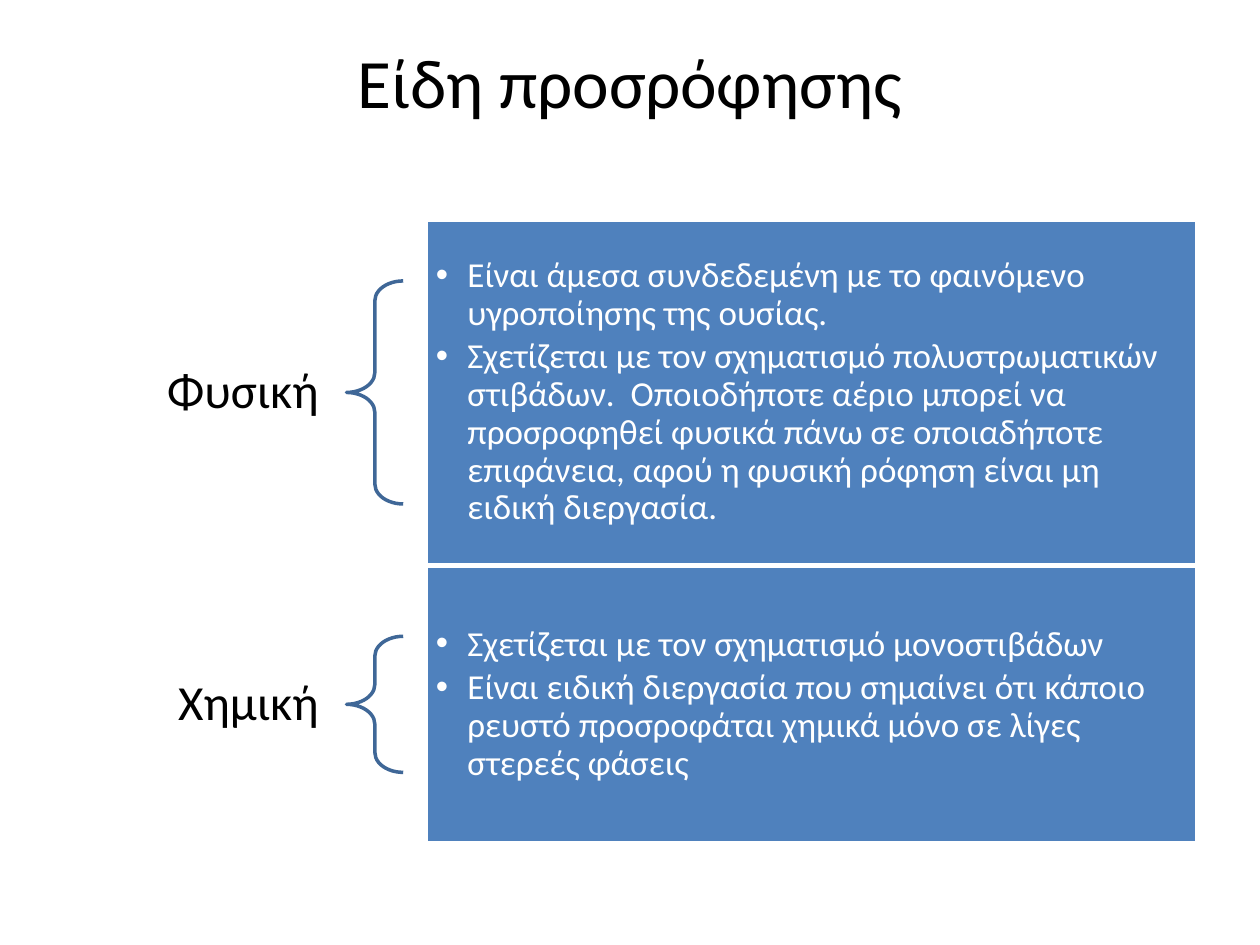
from pptx import Presentation
from pptx import util as u
from pptx.dml.color import RGBColor
from pptx.enum import shapes, text
from pptx.oxml.xmlchemy import OxmlElement

BLACK = RGBColor(0x00, 0x00, 0x00)
WHITE = RGBColor(0xFF, 0xFF, 0xFF)
PANEL_BLUE = RGBColor(0x4F, 0x81, 0xBD)
BRACE_BLUE = RGBColor(0x3F, 0x67, 0x97)

LABEL_LEFT, LABEL_WIDTH, LABEL_HEIGHT = 0.5, 2.25, 0.44
BRACE_LEFT, BRACE_WIDTH = 2.75, 0.45
PANEL_LEFT, PANEL_WIDTH = 3.38, 6.12

KINDS = [
    ("Φυσική", 1.75, 2.73, 1.77, [
        "Είναι άμεσα συνδεδεμένη με το φαινόμενο υγροποίησης της ουσίας.",
        "Σχετίζεται με τον σχηματισμό πολυστρωματικών στιβάδων.  Οποιοδήποτε "
        "αέριο μπορεί να προσροφηθεί φυσικά πάνω σε οποιαδήποτε επιφάνεια, "
        "αφού η φυσική ρόφηση είναι μη ειδική διεργασία.",
    ]),
    ("Χημική", 4.49, 2.2, 1.08, [
        "Σχετίζεται με τον σχηματισμό μονοστιβάδων",
        "Είναι ειδική διεργασία που σημαίνει ότι κάποιο ρευστό προσροφάται "
        "χημικά μόνο σε λίγες στερεές φάσεις",
    ]),
]


def place(box, left, top, width, height):
    box.left, box.top = u.Inches(left), u.Inches(top)
    box.width, box.height = u.Inches(width), u.Inches(height)


def write(box, lines, size, color, align, side=0.08, spacing=1.0, after=0,
          bulleted=False):
    frame = box.text_frame
    frame.text = "\n".join(lines)
    frame.word_wrap = True
    frame.auto_size = text.MSO_AUTO_SIZE.NONE
    frame.vertical_anchor = text.MSO_ANCHOR.MIDDLE
    frame.margin_left = frame.margin_right = u.Inches(side)
    frame.margin_top = frame.margin_bottom = u.Inches(0.08)
    for para in frame.paragraphs:
        para.alignment = align
        para.line_spacing = spacing
        para.space_before = u.Pt(0)
        para.space_after = u.Pt(after)
        para.font.size = u.Pt(size)
        for span in para.runs:
            span.font.size = u.Pt(size)
            span.font.name = "Calibri"
            span.font.color.rgb = color
        if bulleted:
            add_bullet(para)


def add_bullet(para):
    properties = para._p.get_or_add_pPr()
    properties.set("marL", str(u.Inches(0.25)))
    properties.set("indent", str(u.Inches(-0.25)))
    bullet = OxmlElement("a:buChar")
    bullet.set("char", "•")
    properties.append(bullet)


def add_label(page, caption, middle):
    box = page.shapes.add_textbox(0, 0, 0, 0)
    place(box, LABEL_LEFT, middle - LABEL_HEIGHT / 2, LABEL_WIDTH, LABEL_HEIGHT)
    write(box, [caption], 28, BLACK, text.PP_ALIGN.RIGHT, side=0.22, spacing=0.9)


def add_brace(page, middle, height):
    brace = page.shapes.add_shape(shapes.MSO_SHAPE.LEFT_BRACE, 0, 0, 0, 0)
    place(brace, BRACE_LEFT, middle - height / 2, BRACE_WIDTH, height)
    brace.adjustments[0] = 0.35
    brace.shadow.inherit = False
    brace.fill.background()
    brace.line.color.rgb = BRACE_BLUE
    brace.line.width = u.Pt(2)


def fill_panel(panel, top, height, points):
    place(panel, PANEL_LEFT, top, PANEL_WIDTH, height)
    panel.fill.solid()
    panel.fill.fore_color.rgb = PANEL_BLUE
    panel.line.color.rgb = WHITE
    panel.line.width = u.Pt(2)
    write(panel, points, 20, WHITE, text.PP_ALIGN.LEFT, spacing=0.9, after=3,
          bulleted=True)


def main():
    deck = Presentation()
    deck.slide_width, deck.slide_height = u.Inches(10), u.Inches(7.5)
    page = deck.slides.add_slide(deck.slide_layouts.get_by_name("Two Content"))
    title, *panels = page.placeholders
    place(title, 0.5, 0.3, 9, 0.69)
    write(title, ["Είδη προσρόφησης"], 39.6, BLACK, text.PP_ALIGN.CENTER)
    for panel, (caption, top, height, brace_height, points) in zip(panels, KINDS):
        middle = top + height / 2
        add_label(page, caption, middle)
        add_brace(page, middle, brace_height)
        fill_panel(panel, top, height, points)
    deck.save("out.pptx")


if __name__ == "__main__":
    main()
